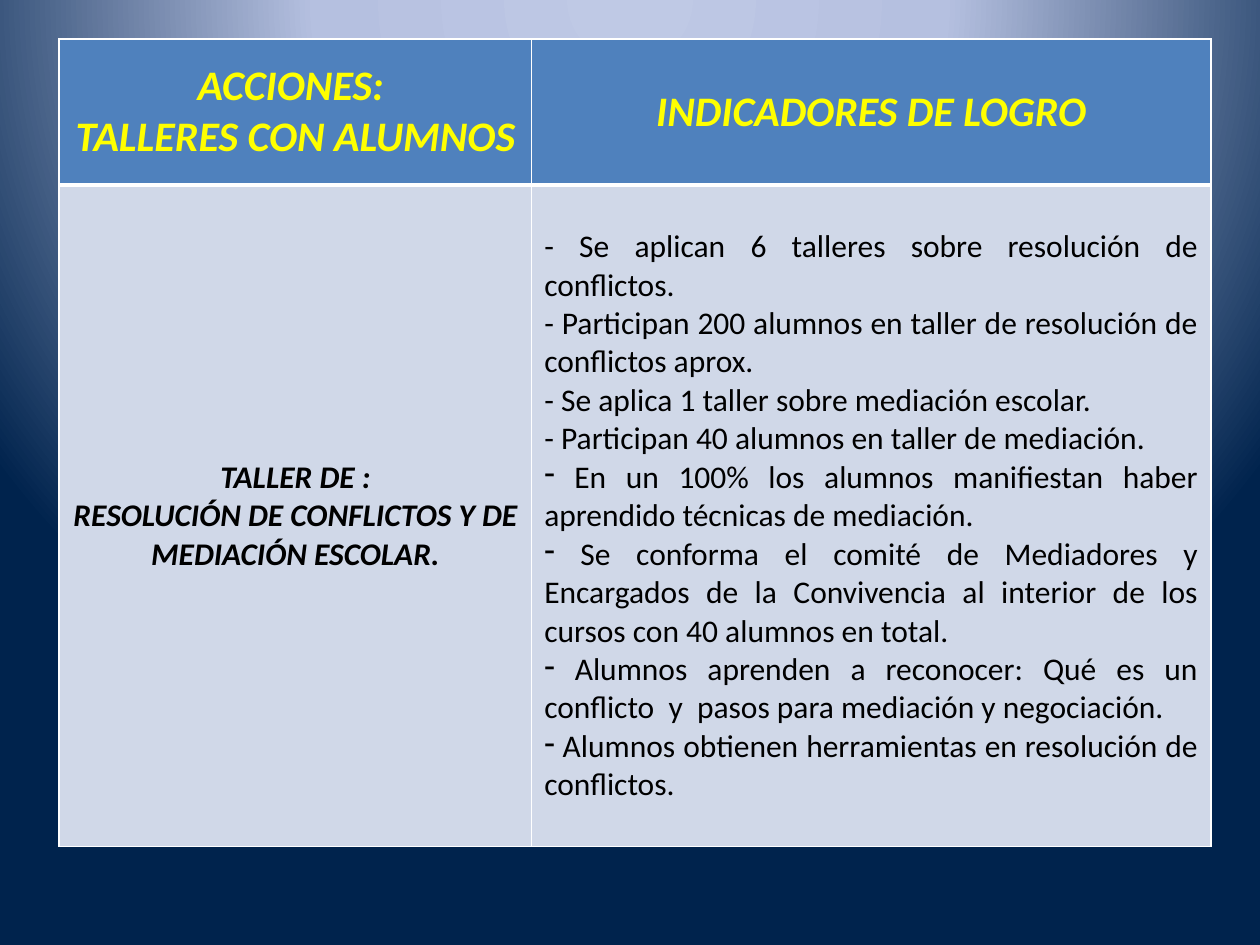
from lxml.etree import SubElement
from pptx import Presentation
from pptx.dml.color import RGBColor
from pptx.enum.text import MSO_ANCHOR as Anchor, PP_ALIGN as Align
from pptx.oxml.ns import qn
from pptx.util import Inches, Pt

FONT = "Calibri"
YELLOW = RGBColor(0xFF, 0xFF, 0x00)
BLACK = RGBColor(0x00, 0x00, 0x00)
WHITE = RGBColor(0xFF, 0xFF, 0xFF)
HEADER_BLUE = RGBColor(0x4F, 0x81, 0xBD)
BODY_BLUE = RGBColor(0xD0, 0xD8, 0xE8)
GLOW = [(0, RGBColor(0xBF, 0xC9, 0xE5)), (40, RGBColor(0xB5, 0xC0, 0xE0)),
        (100, RGBColor(0x00, 0x23, 0x4D))]

COLUMNS = [3.75, 5.39]
ROWS = [1.16, 5.25]

HEADERS = [["ACCIONES: ", "TALLERES CON ALUMNOS"], ["INDICADORES DE LOGRO"]]
WORKSHOP = ["TALLER DE :", "RESOLUCIÓN DE CONFLICTOS Y DE MEDIACIÓN ESCOLAR."]
TYPED_DASHES = [
    "- Se aplican 6 talleres sobre resolución de conflictos.",
    "- Participan 200 alumnos en taller de resolución de conflictos aprox.",
    "- Se aplica 1 taller sobre mediación escolar.",
    "- Participan 40 alumnos en taller de mediación.",
]
BULLETS = [
    " En un 100% los alumnos manifiestan haber aprendido técnicas de mediación.",
    " Se conforma el comité de Mediadores y Encargados de la Convivencia "
    "al interior de los cursos con 40 alumnos en total.",
    " Alumnos aprenden a reconocer: Qué es un conflicto  y  pasos para "
    "mediación y negociación.",
    " Alumnos obtienen herramientas en resolución de conflictos.",
]


def set_background(s):
    """Radial glow centred above the slide."""
    s.background.fill.gradient()
    grad = s.element.find(".//" + qn("a:gradFill"))
    for child in list(grad):
        grad.remove(child)
    stops = SubElement(grad, qn("a:gsLst"))
    for pos, color in GLOW:
        stop = SubElement(stops, qn("a:gs"), pos=str(pos * 1000))
        SubElement(stop, qn("a:srgbClr"), val=str(color))
    shade = SubElement(grad, qn("a:path"), path="circle")
    SubElement(shade, qn("a:fillToRect"),
               l="50000", t="-80000", r="50000", b="180000")


def set_borders(cell, top=1, bottom=1):
    tcPr = cell._tc.get_or_add_tcPr()
    for side, width in (("L", 1), ("R", 1), ("T", top), ("B", bottom)):
        ln = SubElement(tcPr, qn("a:ln" + side), w=str(Pt(width)))
        fill = SubElement(ln, qn("a:solidFill"))
        SubElement(fill, qn("a:srgbClr"), val=str(WHITE))


def add_dash_bullet(p):
    pPr = p._p.get_or_add_pPr()
    pPr.set("marL", "0")
    pPr.set("indent", "0")
    SubElement(pPr, qn("a:buFontTx"))
    SubElement(pPr, qn("a:buChar"), char="-")


def add_lines(cell, lines, size, color, align=Align.CENTER, strong=True):
    """Write one paragraph per line and return the paragraphs."""
    cell.vertical_anchor = Anchor.MIDDLE
    tf = cell.text_frame
    for i, line in enumerate(lines):
        p = tf.add_paragraph() if i else tf.paragraphs[0]
        p.alignment = align
        r = p.add_run()
        r.text = line
        font = r.font
        font.name, font.size = FONT, Pt(size)
        font.bold = font.italic = strong
        font.color.rgb = color
    return tf.paragraphs


def paint(cell, color):
    cell.fill.solid()
    cell.fill.fore_color.rgb = color


def add_plan_table(s):
    table = s.shapes.add_table(2, 2, Inches(0.47), Inches(0.31),
                               Inches(sum(COLUMNS)), Inches(sum(ROWS))).table
    for column, width in zip(table.columns, COLUMNS):
        column.width = Inches(width)
    for row, height in zip(table.rows, ROWS):
        row.height = Inches(height)

    # Header row, with a thick rule below it
    for i, lines in enumerate(HEADERS):
        header, body = table.cell(0, i), table.cell(1, i)
        add_lines(header, lines, 24, YELLOW)
        set_borders(header, bottom=3)
        paint(header, HEADER_BLUE)
        set_borders(body, top=3)
        paint(body, BODY_BLUE)

    # Workshop and its indicators
    add_lines(table.cell(1, 0), WORKSHOP, 18, BLACK)
    indicators = add_lines(table.cell(1, 1), TYPED_DASHES + BULLETS, 18, BLACK,
                           Align.JUSTIFY, strong=False)
    for p in indicators[len(TYPED_DASHES):]:
        add_dash_bullet(p)


def main():
    prs = Presentation()
    prs.slide_width, prs.slide_height = Inches(10), Inches(7.5)
    s = prs.slides.add_slide(prs.slide_layouts[6])
    set_background(s)
    add_plan_table(s)
    prs.save("out.pptx")


if __name__ == "__main__":
    main()
